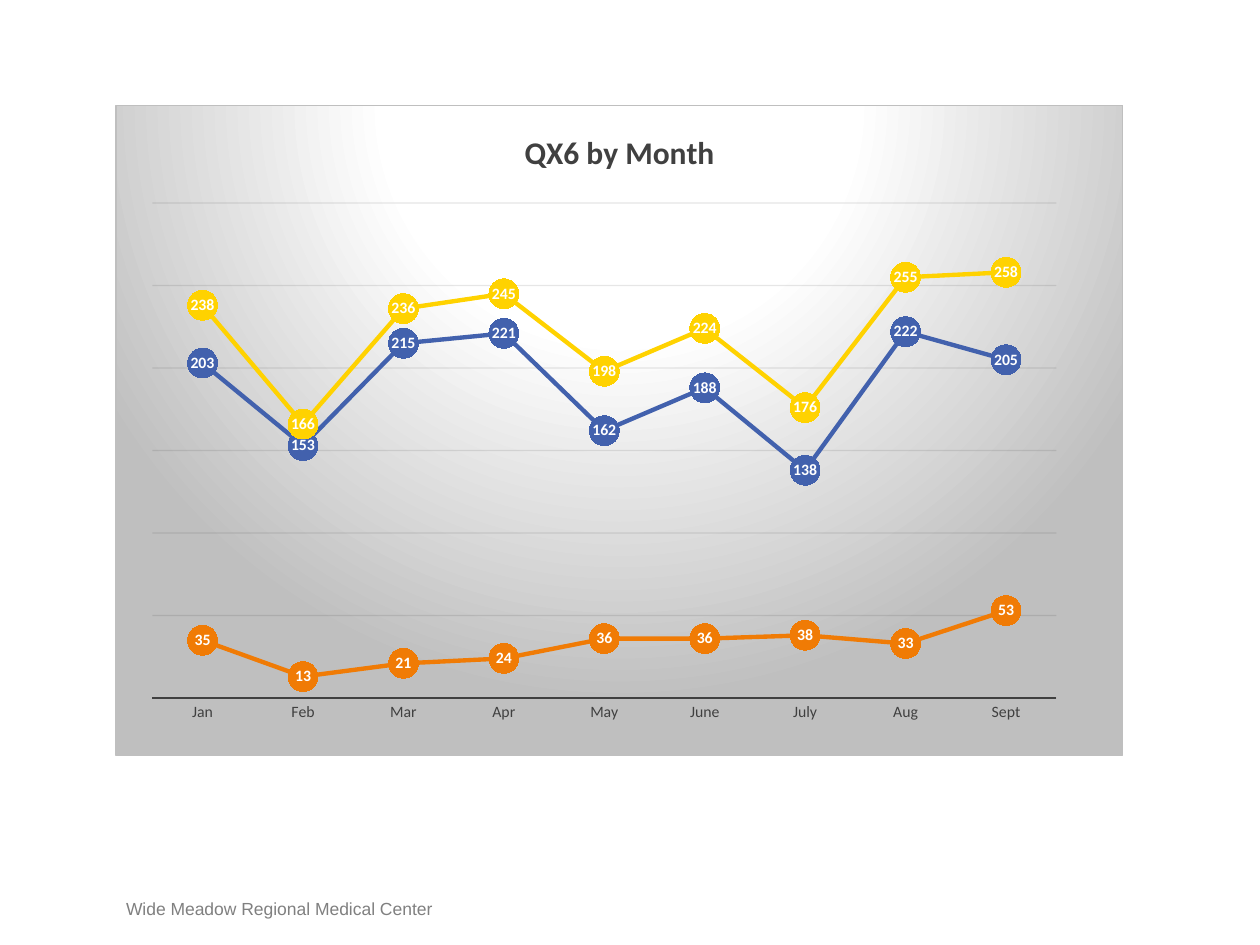
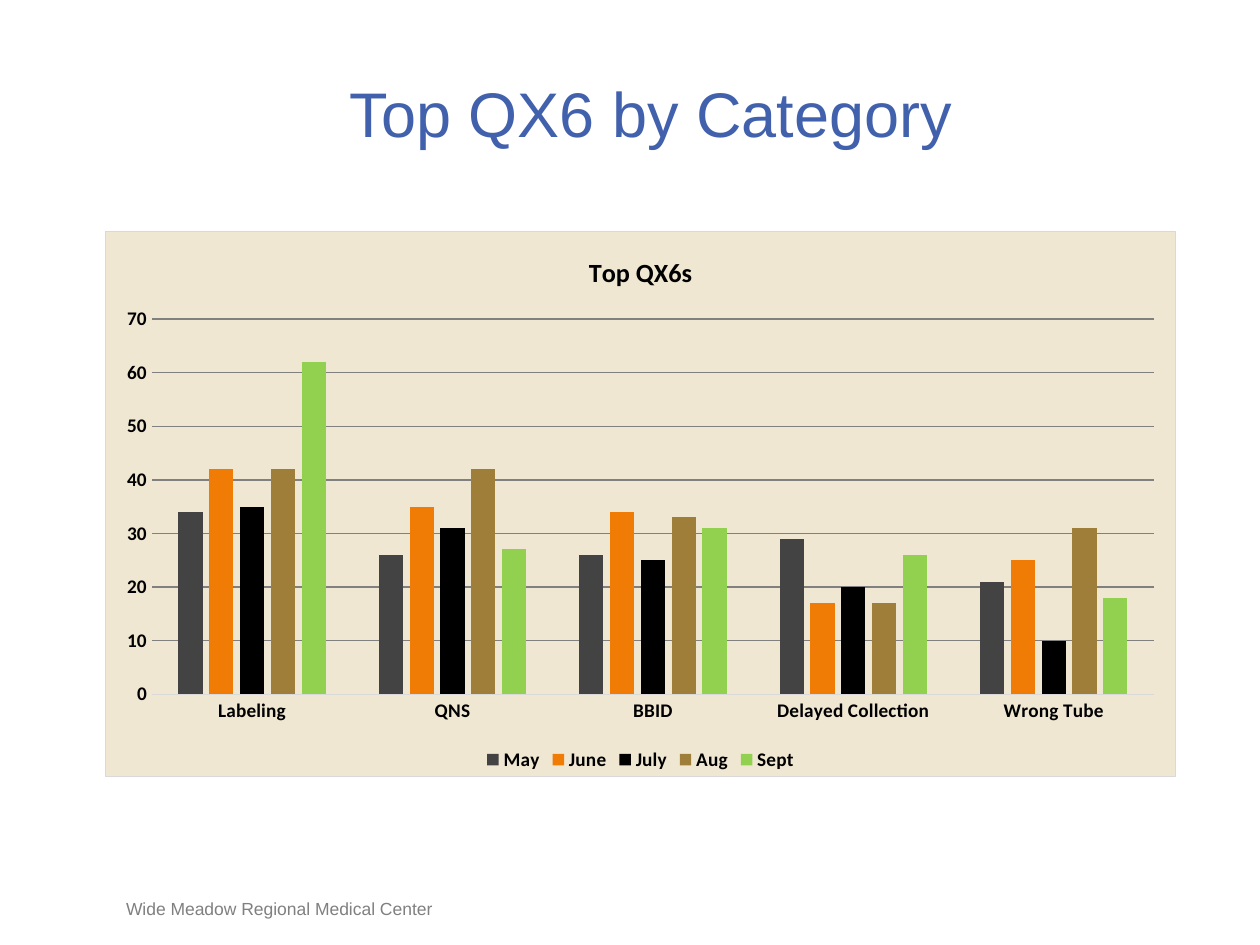
"""Build two slides of incident reports: a monthly line chart and a column chart by category."""
from pptx import Presentation
from pptx.chart.data import CategoryChartData
from pptx.dml.color import RGBColor
from pptx.enum.chart import XL_CHART_TYPE as ChartType
from pptx.enum.chart import XL_LABEL_POSITION as LabelPosition
from pptx.enum.chart import XL_LEGEND_POSITION as LegendPosition
from pptx.enum.chart import XL_MARKER_STYLE as MarkerStyle
from pptx.enum.chart import XL_TICK_MARK as TickMark
from pptx.enum.text import MSO_ANCHOR as Anchor
from pptx.enum.text import PP_ALIGN as Align
from pptx.oxml import parse_xml
from pptx.oxml.ns import nsdecls, qn
from pptx.util import Inches, Pt

COLORS = {
    "blue": "4261AD", "orange": "F07B05", "yellow": "FFD200", "charcoal": "434343",
    "black": "000000", "bronze": "9E7E38", "green": "92D050", "white": "FFFFFF",
    "text": "404040", "footer": "808080", "silver": "BFBFBF", "pale": "D9D9D9",
    "sand": "F0E7D3", "ink": "0D0D0D",
}
NO_MARGINS = {"margin_left": 0, "margin_top": 0, "margin_right": 0, "margin_bottom": 0,
              "word_wrap": True}
COLUMNS, ROWS = 120, 90

deck = Presentation()
deck.slide_width, deck.slide_height = Inches(10), Inches(7.5)
column, row = deck.slide_width / COLUMNS, deck.slide_height / ROWS


def place(left, top, width, height):
    """Turn grid cells into slide lengths."""
    return [int(left * column), int(top * row), int(width * column), int(height * row)]


def style(font, color, **values):
    """Set a font's colour and its other format values."""
    font.color.rgb = RGBColor.from_string(COLORS[color])
    for name, value in values.items():
        setattr(font, name, value)


solid = f'<a:solidFill><a:srgbClr val="{COLORS["sand"]}"/></a:solidFill>'
stops = "".join(
    f'<a:gs pos="{share * 1000}"><a:srgbClr val="{COLORS[color]}"/></a:gs>'
    for share, color in [(0, "white"), (39, "white"), (100, "silver")])
glow = (f'<a:gradFill><a:gsLst>{stops}</a:gsLst><a:path path="circle">'
        '<a:fillToRect l="50000" t="-80000" r="50000" b="180000"/></a:path></a:gradFill>')

charts = [
    {
        "layout": 6, "type": ChartType.LINE_MARKERS, "at": (11, 10, 96, 62),
        "title": "QX6 by Month", "title_size": 18, "text": "text",
        "axis_size": 9, "bold": False, "top": 300, "step": 50,
        "axis_line": ("text", 1.5), "grid": "ink", "fill": glow, "border": "silver",
        "categories": ["Jan", "Feb", "Mar", "Apr", "May", "June", "July", "Aug", "Sept"],
        "series": [
            ("Series 1", "blue", [203, 153, 215, 221, 162, 188, 138, 222, 205]),
            ("Series 2", "orange", [35, 13, 21, 24, 36, 36, 38, 33, 53]),
            ("Series 3", "yellow", [238, 166, 236, 245, 198, 224, 176, 255, 258]),
        ],
    },
    {
        "layout": 5, "type": ChartType.COLUMN_CLUSTERED, "at": (10, 22, 102, 52),
        "heading": "Top QX6 by Category",
        "title": "Top QX6s", "title_size": 15, "text": "black",
        "axis_size": 11, "bold": True, "top": 70, "step": 10,
        "axis_line": ("pale", 0.75), "grid": "footer", "fill": solid, "border": "pale",
        "categories": ["Labeling", "QNS", "BBID", "Delayed Collection", "Wrong Tube"],
        "series": [
            ("May", "charcoal", [34, 26, 26, 29, 21]),
            ("June", "orange", [42, 35, 34, 17, 25]),
            ("July", "black", [35, 31, 25, 20, 10]),
            ("Aug", "bronze", [42, 42, 33, 17, 31]),
            ("Sept", "green", [62, 27, 31, 26, 18]),
        ],
    },
]

for item in charts:
    page = deck.slides.add_slide(deck.slide_layouts[item["layout"]])
    is_line = item["type"] == ChartType.LINE_MARKERS

    footer = page.shapes.add_textbox(*place(12, 85.5, 38, 2))
    texts = [(footer, "Wide Meadow Regional Medical Center", 10, "footer",
              Align.LEFT, Anchor.BOTTOM)]
    if "heading" in item:
        heading = page.shapes.title
        heading.left, heading.top, heading.width, heading.height = place(11, 7, 102, 7.3)
        texts.append((heading, item["heading"], 36, "blue", Align.CENTER, Anchor.MIDDLE))
    for box, words, size, color, align, anchor in texts:
        for name, value in NO_MARGINS.items():
            setattr(box.text_frame, name, value)
        box.text_frame.vertical_anchor = anchor
        para = box.text_frame.paragraphs[0]
        para.alignment = align
        span = para.add_run()
        span.text = words
        style(span.font, color, name="Arial", size=Pt(size))

    data = CategoryChartData()
    data.categories = item["categories"]
    for name, color, values in item["series"]:
        data.add_series(name, values)
    chart = page.shapes.add_chart(item["type"], *place(*item["at"]), data).chart
    style(chart.font, "black", name="Calibri", size=Pt(10))
    chart.has_title = True
    chart.chart_title.include_in_layout = False
    title_para = chart.chart_title.text_frame.paragraphs[0]
    span = title_para.add_run()
    span.text = item["title"]
    style(span.font, item["text"], name="Calibri", size=Pt(item["title_size"]), bold=True)

    axis_font = {"name": "Calibri", "size": Pt(item["axis_size"]), "bold": item["bold"]}
    for axis in (chart.category_axis, chart.value_axis):
        axis.major_tick_mark = axis.minor_tick_mark = TickMark.NONE
        style(axis.tick_labels.font, item["text"], **axis_font)
    axis_color, axis_width = item["axis_line"]
    value_axis = chart.value_axis
    value_axis.minimum_scale, value_axis.maximum_scale = 0, item["top"]
    value_axis.major_unit = item["step"]
    value_axis.has_major_gridlines = True
    value_axis.format.line.fill.background()
    value_axis.visible = not is_line
    for line, color, width in [
            (chart.category_axis.format.line, axis_color, axis_width),
            (value_axis.major_gridlines.format.line, item["grid"], 0.75)]:
        line.color.rgb = RGBColor.from_string(COLORS[color])
        line.width = Pt(width)

    plot = chart.plots[0]
    plot.vary_by_categories = False
    for series, (name, color, values) in zip(plot.series, item["series"]):
        rgb = RGBColor.from_string(COLORS[color])
        fills = [series.format.fill]
        if is_line:
            series.smooth = False
            series.format.line.color.rgb = rgb
            series.format.line.width = Pt(2.5)
            series.marker.style, series.marker.size = MarkerStyle.CIRCLE, 17
            series.marker.format.line.color.rgb = rgb
            fills = [series.marker.format.fill]
            labels = series.data_labels
            labels.show_value, labels.position = True, LabelPosition.CENTER
            style(labels.font, "white", name="Calibri", size=Pt(9), bold=True)
        for fill in fills:
            fill.solid()
            fill.fore_color.rgb = rgb

    body = chart.element.find(qn("c:chart"))
    body.addnext(parse_xml(
        f'<c:spPr {nsdecls("c", "a")}>{item["fill"]}<a:ln w="9525"><a:solidFill>'
        f'<a:srgbClr val="{COLORS[item["border"]]}"/></a:solidFill></a:ln></c:spPr>'))
    chart.has_legend = not is_line
    if is_line:
        grid_color = body.find(f'.//{qn("c:majorGridlines")}//{qn("a:srgbClr")}')
        grid_color.append(parse_xml(f'<a:alpha {nsdecls("a")} val="10000"/>'))
        shares = "".join(f'<c:{tag} val="{share}"/>' for tag, share in
                         [("x", 0.036), ("y", 0.15), ("w", 0.898), ("h", 0.762)])
        plot_area = body.find(qn("c:plotArea"))
        for old_layout in plot_area.findall(qn("c:layout")):
            plot_area.remove(old_layout)
        plot_area.insert(0, parse_xml(
            f'<c:layout {nsdecls("c")}><c:manualLayout><c:layoutTarget val="inner"/>'
            f'<c:xMode val="edge"/><c:yMode val="edge"/>{shares}</c:manualLayout></c:layout>'))
    else:
        plot.gap_width, plot.overlap = 219, -27
        chart.legend.position = LegendPosition.BOTTOM
        chart.legend.include_in_layout = False
        style(chart.legend.font, "black", **axis_font)

deck.save("out.pptx")
